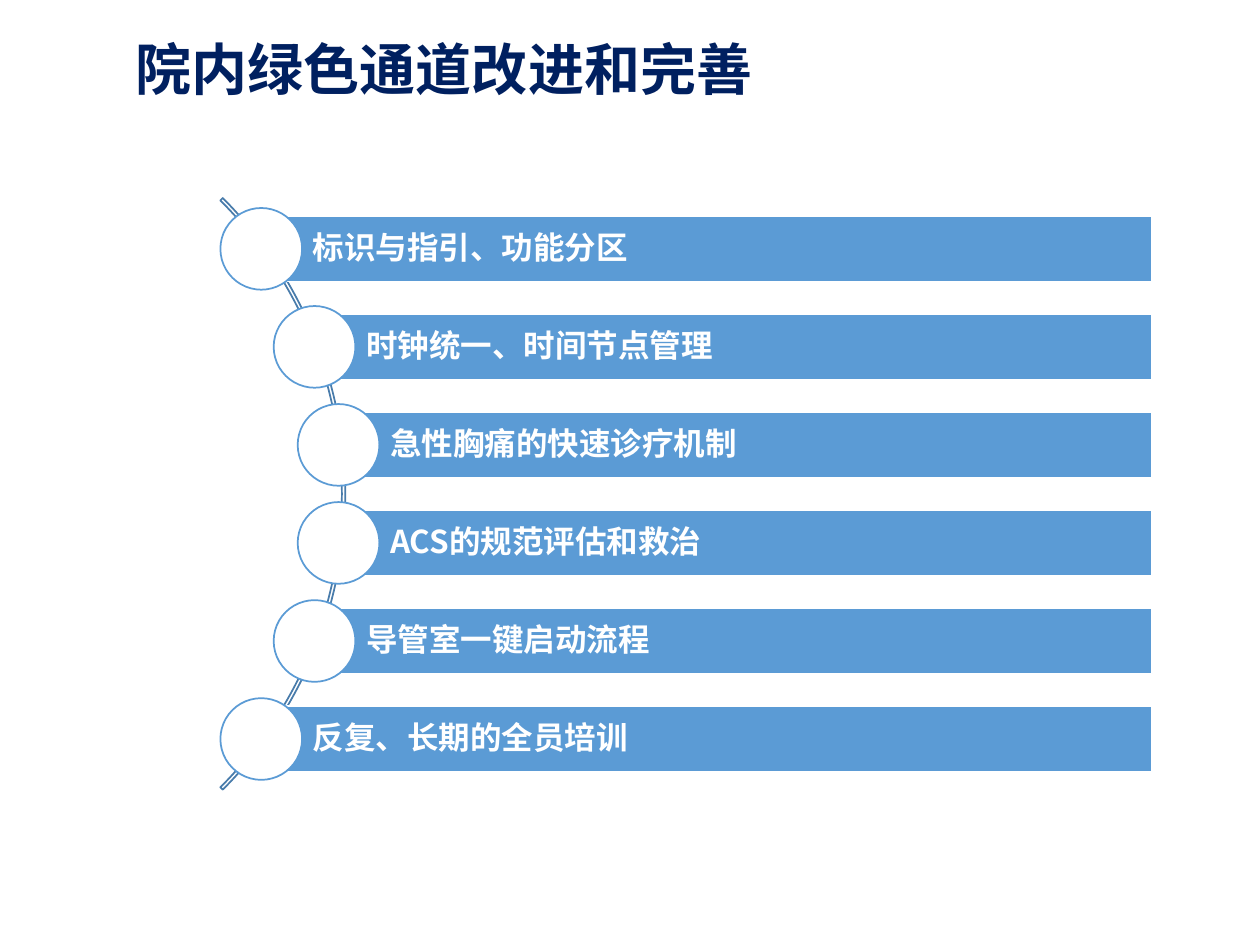
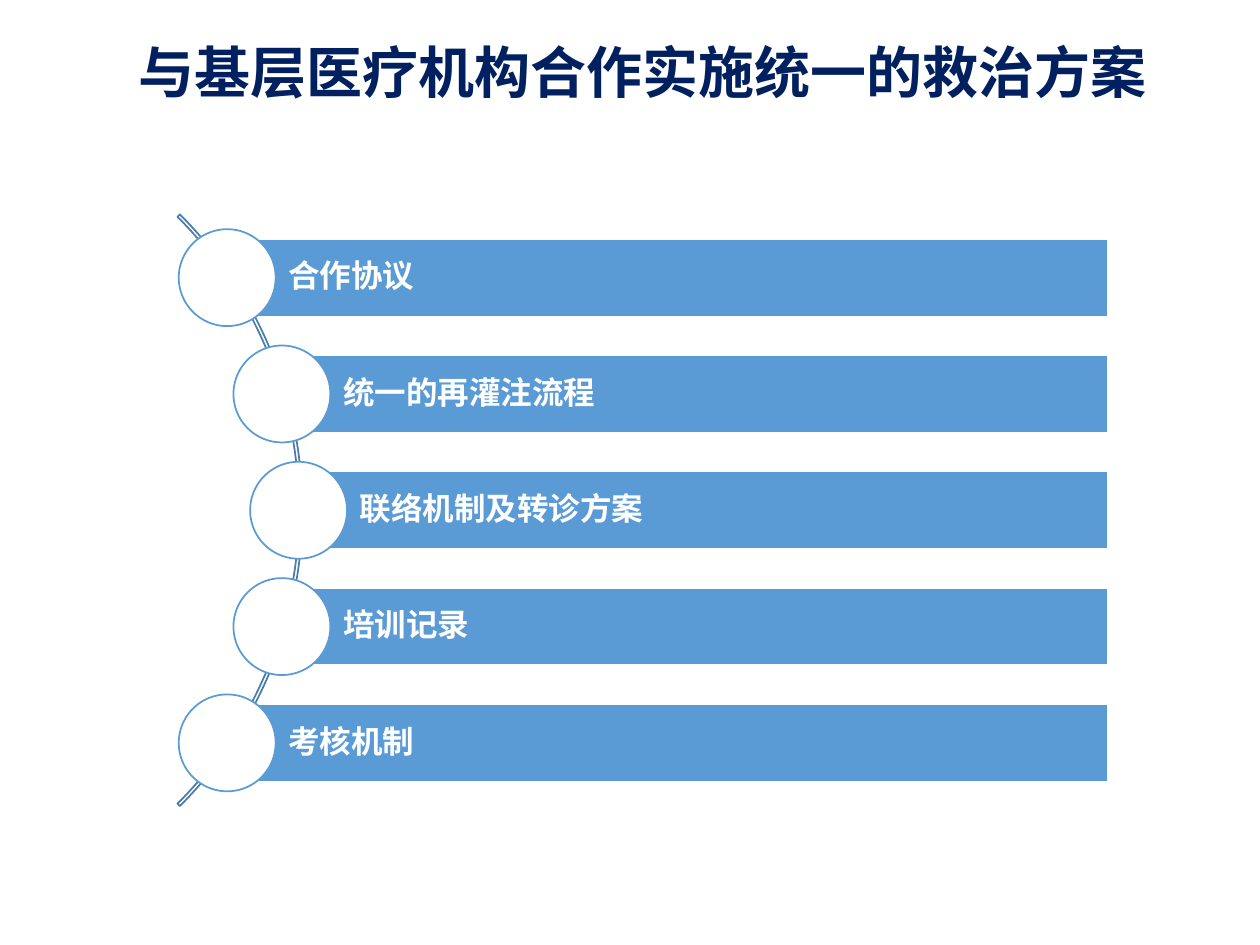
"""Build two slides that list measures as bars strung along an arc."""
import dataclasses
import math

import lxml.etree
import pptx
import pptx.dml.color
import pptx.enum.shapes
import pptx.enum.text
import pptx.oxml.ns
import pptx.util

COLUMNS, ROWS = 100, 75
CELL = pptx.util.Inches(10) // COLUMNS
NAVY, BLUE, STEEL, WHITE = "002060", "5B9BD5", "497CAB", "FFFFFF"
CJK = "Noto Sans CJK SC"
ARC_SIZE = 66.4
ORBIT = 32.9
SHAPE = pptx.enum.shapes.MSO_SHAPE


@dataclasses.dataclass(frozen=True)
class Measure:
    """One labelled bar."""
    label: str
    latin: str = CJK


@dataclasses.dataclass(frozen=True)
class ArcList:
    """A title and the bars that follow an arc, measured in grid cells."""
    title: str
    title_box: tuple[float, float, float, float]
    arc_x: float
    arc_y: float
    pitch: float
    right: float
    measures: tuple[Measure, ...]


SLIDES = (
    ArcList("院内绿色通道改进和完善", (9.8, 2.8, 60.2, 5.9), -5.8, 39.2, 7.78, 91.45, (
        Measure("标识与指引、功能分区"),
        Measure("时钟统一、时间节点管理"),
        Measure("急性胸痛的快速诊疗机制"),
        Measure("ACS的规范评估和救治"),
        Measure("导管室一键启动流程"),
        Measure("反复、长期的全员培训"),
    )),
    ArcList("与基层医疗机构合作实施统一的救治方案", (10, 3, 84.3, 5.9), -9.2, 40.5, 9.23, 87.95, (
        Measure("合作协议", "Calibri"),
        Measure("统一的再灌注流程"),
        Measure("联络机制及转诊方案"),
        Measure("培训记录"),
        Measure("考核机制"),
    )),
)


def rgb(value: str) -> pptx.dml.color.RGBColor:
    """Turn a hex string into a colour."""
    return pptx.dml.color.RGBColor.from_string(value)


def cells(*values: float) -> list[int]:
    """Turn grid cells into slide lengths."""
    return [round(value * CELL) for value in values]


def write(tf, text: str, size: float, color: str, latin: str = CJK) -> None:
    """Write one bold, left-aligned, vertically centred paragraph."""
    tf.word_wrap = True
    tf.vertical_anchor = pptx.enum.text.MSO_ANCHOR.MIDDLE
    p = tf.paragraphs[0]
    p.text = text
    p.alignment = pptx.enum.text.PP_ALIGN.LEFT
    p.line_spacing = 0.9
    font = p.font
    font.size, font.bold, font.name = pptx.util.Pt(size), True, latin
    font.color.rgb = rgb(color)
    qn = pptx.oxml.ns.qn
    lxml.etree.SubElement(p._p.pPr.find(qn("a:defRPr")), qn("a:ea"), typeface=CJK)


def add_shape(s, kind, box: tuple[float, float, float, float], line: str, fill: str | None = None):
    """Add a flat preset shape with a thin outline."""
    sp = s.shapes.add_shape(kind, *cells(*box))
    sp.shadow.inherit = False
    sp.line.color.rgb = rgb(line)
    sp.line.width = pptx.util.Pt(1)
    if fill:
        sp.fill.solid()
        sp.fill.fore_color.rgb = rgb(fill)
    else:
        sp.fill.background()
    return sp


def add_title(s, spec: ArcList) -> None:
    """Add the slide title."""
    tf = s.shapes.add_textbox(*cells(*spec.title_box)).text_frame
    write(tf, spec.title, 32, NAVY)
    tf.auto_size = pptx.enum.text.MSO_AUTO_SIZE.SHAPE_TO_FIT_TEXT


def add_arc(s, spec: ArcList) -> None:
    """Add the thin arc that joins the circles."""
    half = ARC_SIZE / 2
    box = (spec.arc_x - half, spec.arc_y - half, ARC_SIZE, ARC_SIZE)
    arc = add_shape(s, SHAPE.BLOCK_ARC, box, STEEL)
    for i, value in enumerate((189, 27, 0.004)):
        arc.adjustments[i] = value


def add_measure(s, spec: ArcList, index: int) -> None:
    """Add one bar, starting at the centre of its circle on the arc."""
    measure = spec.measures[index]
    bar_height = spec.pitch / 1.5
    diameter = bar_height * 1.25
    dy = (index - (len(spec.measures) - 1) / 2) * spec.pitch
    x, y = spec.arc_x + math.sqrt(ORBIT ** 2 - dy ** 2), spec.arc_y + dy

    bar = add_shape(s, SHAPE.RECTANGLE, (x, y - bar_height / 2, spec.right - x, bar_height), WHITE, BLUE)
    tf = bar.text_frame
    write(tf, measure.label, 18, WHITE, measure.latin)
    tf.paragraphs[0].space_after = pptx.util.Pt(6.3)
    tf.margin_left, tf.margin_right = cells(bar_height * 0.79, 0.5)
    add_shape(s, SHAPE.OVAL, (x - diameter / 2, y - diameter / 2, diameter, diameter), BLUE, WHITE)


def main() -> None:
    """Build and save the presentation."""
    prs = pptx.Presentation()
    prs.slide_width, prs.slide_height = cells(COLUMNS, ROWS)
    for spec in SLIDES:
        s = prs.slides.add_slide(prs.slide_layouts[6])
        add_title(s, spec)
        add_arc(s, spec)
        for index in range(len(spec.measures)):
            add_measure(s, spec, index)
    prs.save("out.pptx")


if __name__ == "__main__":
    main()
